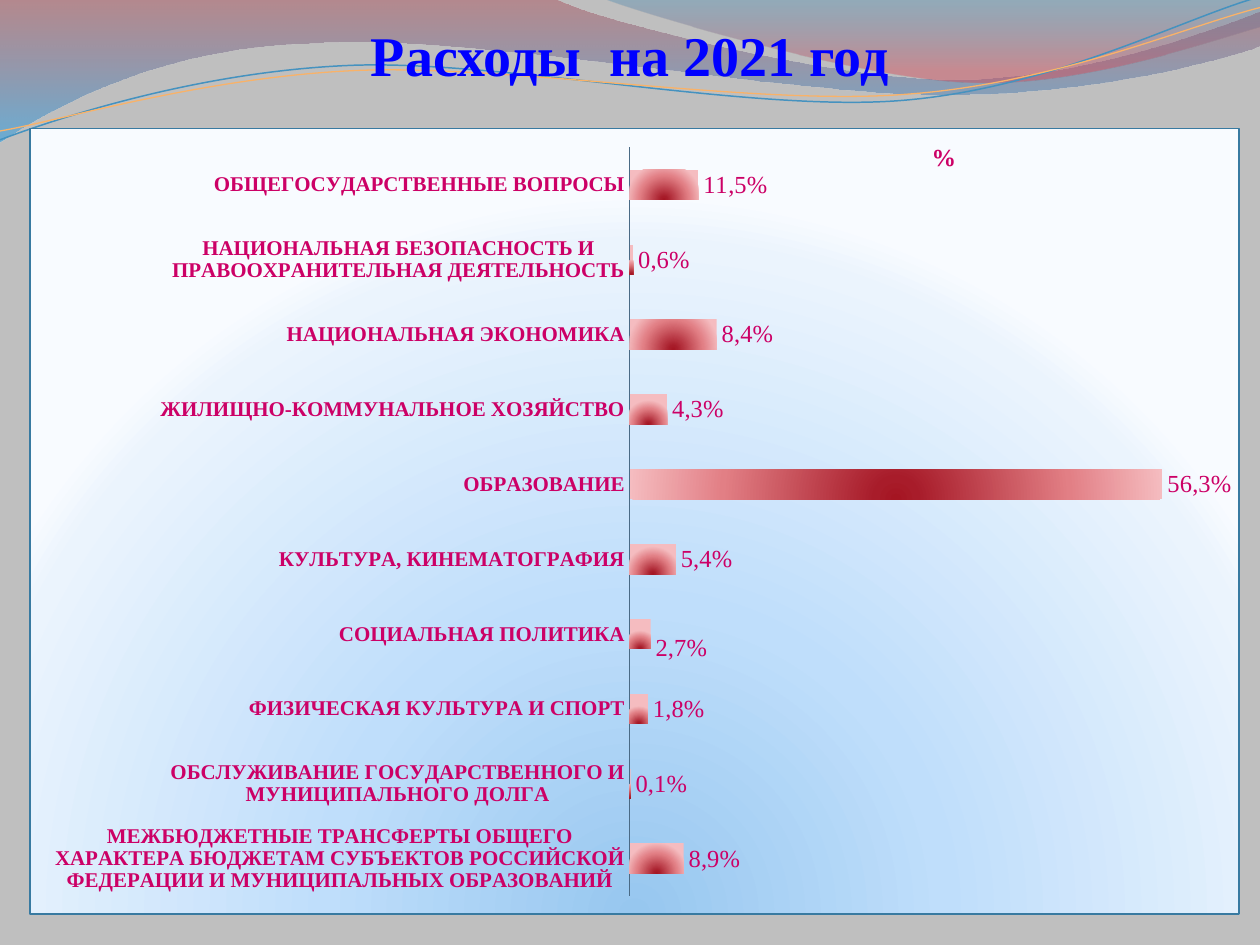
from dataclasses import dataclass

from lxml.etree import SubElement
from pptx import Presentation
from pptx.chart.data import CategoryChartData
from pptx.dml.color import RGBColor
from pptx.enum.chart import XL_CHART_TYPE, XL_LABEL_POSITION, XL_TICK_MARK, XL_TICK_LABEL_POSITION
from pptx.enum.text import MSO_ANCHOR, MSO_AUTO_SIZE, PP_ALIGN
from pptx.oxml import parse_xml
from pptx.oxml.ns import nsdecls, qn
from pptx.util import Inches, Pt


@dataclass(frozen=True)
class Theme:
    """Colours, gradients (position, colour, opacity) and type sizes."""
    font: str = "Times New Roman"
    background: str = "BFBFBF"
    title: str = "0000FF"
    text: str = "CC0066"
    axis: str = "4A6A85"
    border: str = "387AA1"
    blue_line: str = "4592BF"
    orange_line: str = "F9B268"
    title_size: int = 32
    label_size: int = 14
    category_size: int = 12
    left_wave: tuple = ((0, "A84752", 45), (100, "249FE6", 55))
    right_wave: tuple = ((0, "2A7EAF", 30), (80, "D24B5A", 45))
    panel: tuple = ((0, "97C7EF", 100), (43, "BFDEFB", 100), (93, "EBF4FD", 100), (100, "F8FBFF", 100))
    bar: tuple = ((0, "A51522", 100), (8, "A81C2A", 100), (65, "E27F85", 100), (100, "F5BCC0", 100))


LINEAR = '<a:lin ang="5400000" scaled="1"/>'
CIRCLE = '<a:path path="circle"><a:fillToRect l="50000" t="130000" r="50000" b="-30000"/></a:path>'


def gradient(stops, shade):
    """Return a gradient fill element."""
    marks = "".join(
        f'<a:gs pos="{position * 1000}"><a:srgbClr val="{color}">'
        f'<a:alpha val="{opacity * 1000}"/></a:srgbClr></a:gs>'
        for position, color, opacity in stops)
    return parse_xml(f'<a:gradFill {nsdecls("a")} rotWithShape="1"><a:gsLst>{marks}</a:gsLst>{shade}</a:gradFill>')


def manual_layout(**values):
    """Return a chart layout element from shares of the chart's size."""
    layout = parse_xml(f'<c:layout {nsdecls("c")}><c:manualLayout/></c:layout>')
    for name, value in values.items():
        SubElement(layout[0], qn(f"c:{name}")).set("val", str(value))
    return layout


def bend(element, segments):
    """Turn each run of three outline points into one cubic curve."""
    lines = iter(list(element.iter(qn("a:lnTo"))))
    for segment in segments:
        group = [next(lines) for _ in segment]
        if len(group) == 3:
            first = group[0]
            first.addprevious(parse_xml(f'<a:cubicBezTo {nsdecls("a")}/>'))
            cubic = first.getprevious()
            for line in group:
                cubic.append(line[0])
                line.getparent().remove(line)


class SlideBuilder:
    """Draws styled elements on a grid of 100 columns by 75 rows."""

    def __init__(self, deck, theme):
        """Add a page with the theme background."""
        self.theme = theme
        self.unit = deck.slide_width / 100
        self.page = deck.slides.add_slide(deck.slide_layouts[5])
        self.page.background.fill.solid()
        self.page.background.fill.fore_color.rgb = RGBColor.from_string(theme.background)

    def frame(self, *cells):
        """Convert grid lengths to slide lengths."""
        return [round(cell * self.unit) for cell in cells]

    def style(self, font, size, color, bold=True):
        """Apply type settings to a font."""
        formats = {"name": self.theme.font, "size": Pt(size), "bold": bold}
        for name, value in formats.items():
            setattr(font, name, value)
        font.color.rgb = RGBColor.from_string(color)

    def wave(self, start, *segments, stops=None, line=None, width=0.75):
        """Draw a curved band or a curved line."""
        builder = self.page.shapes.build_freeform(*self.frame(*start))
        points = [self.frame(*point) for segment in segments for point in segment]
        builder.add_line_segments(points, close=stops is not None)
        shape = builder.convert_to_shape()
        bend(shape.element, segments)
        shape.shadow.inherit = False
        shape.fill.background()
        shape.line.fill.background()
        if stops:
            properties = shape.element.spPr
            properties.replace(properties.find(qn("a:noFill")), gradient(stops, LINEAR))
        if line:
            shape.line.color.rgb = RGBColor.from_string(line)
            shape.line.width = Pt(width)

    def title(self, text, cells):
        """Fill the title placeholder and bring it forward."""
        box = self.page.shapes.title
        for name, value in zip(("left", "top", "width", "height"), self.frame(*cells)):
            setattr(box, name, value)
        formats = {"margin_left": 0, "margin_right": 0, "margin_top": Inches(0.05), "margin_bottom": 0,
                   "vertical_anchor": MSO_ANCHOR.BOTTOM, "auto_size": MSO_AUTO_SIZE.NONE, "text": text}
        for name, value in formats.items():
            setattr(box.text_frame, name, value)
        para = box.text_frame.paragraphs[0]
        para.alignment = PP_ALIGN.CENTER
        self.style(para.runs[0].font, self.theme.title_size, self.theme.title)
        self.page.shapes.element.append(box.element)

    def bar_chart(self, heading, rows, cells, lowered):
        """Draw a bar chart whose rows hold category, value and label."""
        theme = self.theme
        data = CategoryChartData(number_format="0.0%")
        data.categories = [row[0] for row in rows]
        data.add_series(heading, [row[1] for row in rows])
        chart = self.page.shapes.add_chart(XL_CHART_TYPE.BAR_CLUSTERED, *self.frame(*cells), data).chart
        self.style(chart.font, theme.category_size, theme.text)
        chart.has_legend = False
        self.chart_heading(chart, heading)
        self.chart_panel(chart)
        self.chart_axes(chart)
        plot = chart.plots[0]
        for name, value in {"gap_width": 150, "overlap": -25, "vary_by_categories": False}.items():
            setattr(plot, name, value)
        series = plot.series[0]
        series.format.fill.background()
        properties = series._element.spPr
        properties.replace(properties.find(qn("a:noFill")), gradient(theme.bar, CIRCLE))
        self.chart_labels(series, [row[2] for row in rows], lowered)

    def chart_heading(self, chart, heading):
        """Place the chart title over the plot."""
        chart.has_title = True
        title = chart.chart_title
        title.text_frame.text = heading
        self.style(title.text_frame.paragraphs[0].runs[0].font, self.theme.label_size, self.theme.text)
        element = title._element
        for layout in element.findall(qn("c:layout")):
            element.remove(layout)
        element.find(qn("c:tx")).addnext(manual_layout(xMode="edge", yMode="edge", x=0.742, y=0.011))

    def chart_panel(self, chart):
        """Fill and outline the chart area and place its plot."""
        root = chart._chartSpace
        panel = parse_xml(
            f'<c:spPr {nsdecls("c", "a")}><a:ln w="{Pt(0.75)}"><a:solidFill>'
            f'<a:srgbClr val="{self.theme.border}"/></a:solidFill></a:ln></c:spPr>')
        panel.insert(0, gradient(self.theme.panel, CIRCLE))
        root.find(qn("c:chart")).addnext(panel)
        area = root.find(qn("c:chart")).find(qn("c:plotArea"))
        for layout in area.findall(qn("c:layout")):
            area.remove(layout)
        area.insert(0, manual_layout(layoutTarget="inner", xMode="edge", yMode="edge",
                                     x=0.496, y=0.024, w=0.504, h=0.953))

    def chart_axes(self, chart):
        """Show the category axis only."""
        category, value = chart.category_axis, chart.value_axis
        formats = {"major_tick_mark": XL_TICK_MARK.NONE, "minor_tick_mark": XL_TICK_MARK.NONE,
                   "tick_label_position": XL_TICK_LABEL_POSITION.NEXT_TO_AXIS, "has_major_gridlines": False}
        for name, setting in formats.items():
            setattr(category, name, setting)
        category.format.line.color.rgb = RGBColor.from_string(self.theme.axis)
        self.style(category.tick_labels.font, self.theme.category_size, self.theme.text)
        limits = {"minimum_scale": 0, "maximum_scale": 0.7, "has_major_gridlines": False, "visible": False}
        for name, setting in limits.items():
            setattr(value, name, setting)

    def chart_labels(self, series, labels, lowered):
        """Write the label of each bar."""
        shared = series.data_labels
        formats = {"show_value": True, "number_format": "0.0%", "number_format_is_linked": False,
                   "position": XL_LABEL_POSITION.OUTSIDE_END}
        for name, value in formats.items():
            setattr(shared, name, value)
        self.style(shared.font, self.theme.label_size, self.theme.text, False)
        for index, text in enumerate(labels):
            label = series.points[index].data_label
            label.text_frame.text = text
            span = label.text_frame.paragraphs[0].runs[0]
            self.style(span.font, self.theme.label_size, self.theme.text, False)
            label.position = XL_LABEL_POSITION.OUTSIDE_END
            if index == lowered:
                element = series._element.find(qn("c:dLbls")).findall(qn("c:dLbl"))[index]
                element.find(qn("c:idx")).addnext(manual_layout(x=0, y=0.018))


EXPENSES = (
    ("МЕЖБЮДЖЕТНЫЕ ТРАНСФЕРТЫ ОБЩЕГО ХАРАКТЕРА БЮДЖЕТАМ СУБЪЕКТОВ РОССИЙСКОЙ ФЕДЕРАЦИИ "
     "И МУНИЦИПАЛЬНЫХ ОБРАЗОВАНИЙ", 0.062, "8,9%"),
    ("ОБСЛУЖИВАНИЕ ГОСУДАРСТВЕННОГО И МУНИЦИПАЛЬНОГО ДОЛГА", 0.001, "0,1%"),
    ("ФИЗИЧЕСКАЯ КУЛЬТУРА И СПОРТ", 0.021, "1,8%"),
    ("СОЦИАЛЬНАЯ ПОЛИТИКА", 0.024, "2,7%"),
    ("КУЛЬТУРА, КИНЕМАТОГРАФИЯ", 0.053, "5,4%"),
    ("ОБРАЗОВАНИЕ", 0.612, "56,3%"),
    ("ЖИЛИЩНО-КОММУНАЛЬНОЕ ХОЗЯЙСТВО", 0.043, "4,3%"),
    ("НАЦИОНАЛЬНАЯ ЭКОНОМИКА", 0.1, "8,4%"),
    ("НАЦИОНАЛЬНАЯ БЕЗОПАСНОСТЬ И ПРАВООХРАНИТЕЛЬНАЯ ДЕЯТЕЛЬНОСТЬ", 0.004, "0,6%"),
    ("ОБЩЕГОСУДАРСТВЕННЫЕ ВОПРОСЫ", 0.079, "11,5%"),
)


def main():
    """Build the expenses slide."""
    deck = Presentation()
    deck.slide_width, deck.slide_height = Inches(10), Inches(7.5)
    theme = Theme()
    slide = SlideBuilder(deck, theme)
    slide.wave((0, 0), ((44, -0.1),), ((47.6, 1.7), (66.4, 6.3), (75.8, 6.3)),
               ((85.3, 6.3), (95.8, 2.6), (100, 0.9)), ((100.1, 3.6),),
               ((98.3, 4.4), (87, 7.6), (74.6, 7.5)), ((62.2, 7.5), (38.2, 2.8), (25.7, 3.4)),
               ((12.9, 3.6), (4.6, 8.3), (-0.1, 11.3)), stops=theme.left_wave)
    slide.wave((47.9, -0.1), ((50.9, 1.1), (68.2, 6.2), (76.9, 6.5)),
               ((85.6, 6.9), (96.1, 3.2), (100, 2.1)), ((100, 0),), stops=theme.right_wave)
    slide.wave((0, 11.1), ((4.8, 9.3), (15.8, 5.7), (27.7, 5.2)),
               ((39.5, 4.7), (59.3, 8.9), (71.3, 8)), ((83.3, 7.1), (93.8, 1.5), (99.8, -0.2)),
               line=theme.blue_line, width=0.85)
    slide.wave((0, 10.4), ((4.7, 9.6), (16.4, 6.1), (28.3, 5.6)),
               ((40.3, 5.1), (59.7, 8.4), (71.7, 7.5)), ((83.6, 6.7), (94.1, 2.1), (100, 0.6)),
               line=theme.orange_line)
    slide.title("Расходы  на 2021 год", (0, 2.3, 100, 4.7))
    slide.bar_chart("%", EXPENSES, (2.34, 10.15, 96.06, 62.45), lowered=3)
    deck.save("out.pptx")


if __name__ == "__main__":
    main()
